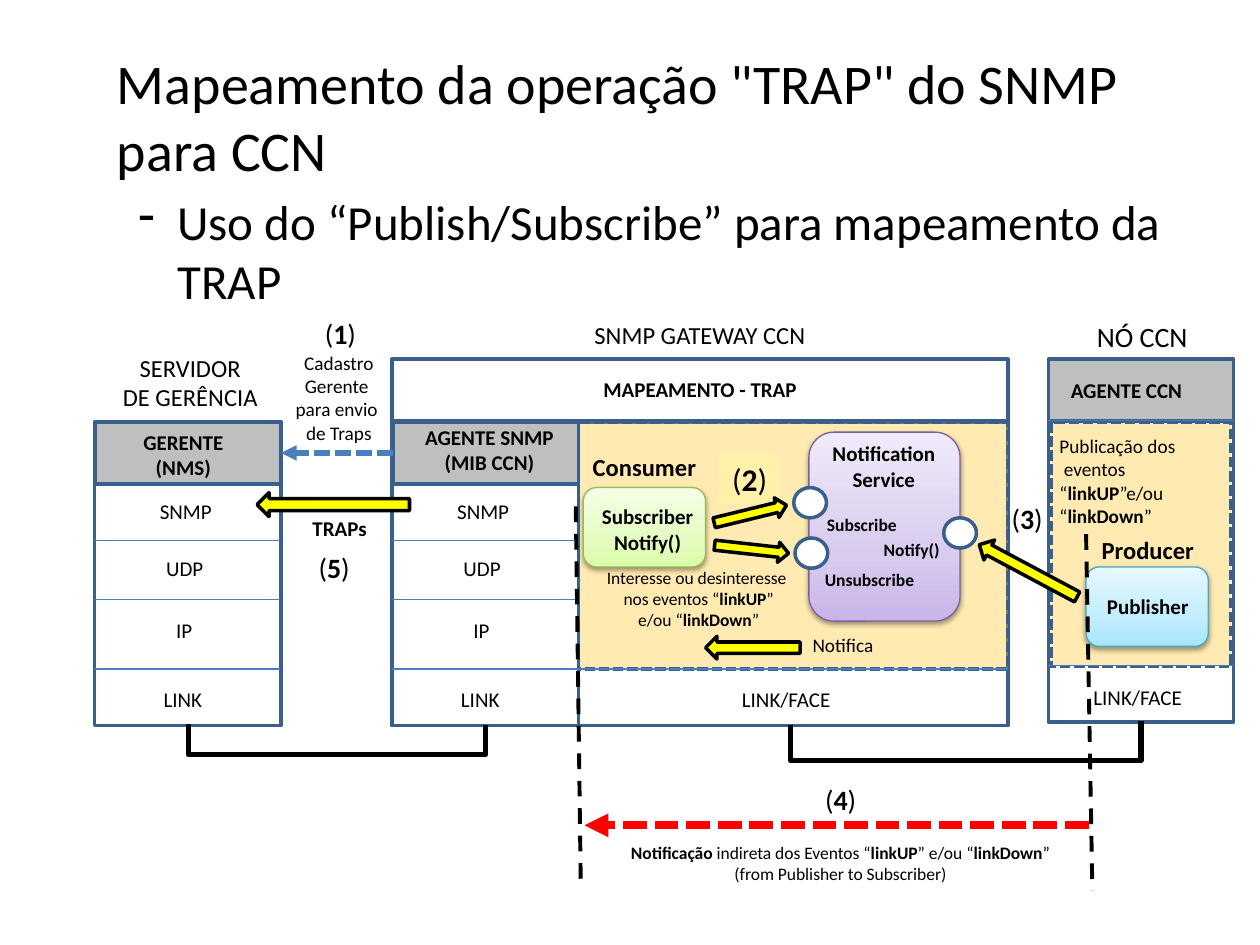
"""Build the slide that maps the SNMP TRAP operation onto CCN."""
from copy import deepcopy
from dataclasses import dataclass

from lxml import etree
from pptx import Presentation
from pptx.dml.color import RGBColor
from pptx.enum.dml import MSO_LINE
from pptx.enum.shapes import MSO_CONNECTOR, MSO_SHAPE
from pptx.enum.text import MSO_ANCHOR, MSO_AUTO_SIZE, PP_ALIGN
from pptx.oxml.ns import qn
from pptx.util import Inches, Pt

RECT, ROUND = MSO_SHAPE.RECTANGLE, MSO_SHAPE.ROUNDED_RECTANGLE
OVAL, ARROW = MSO_SHAPE.OVAL, MSO_SHAPE.RIGHT_ARROW
STRAIGHT, ELBOW = MSO_CONNECTOR.STRAIGHT, MSO_CONNECTOR.ELBOW
SHORT_DASH, LONG_DASH = MSO_LINE.SQUARE_DOT, MSO_LINE.DASH
LEFT, CENTER = PP_ALIGN.LEFT, PP_ALIGN.CENTER
TOP, MIDDLE = MSO_ANCHOR.TOP, MSO_ANCHOR.MIDDLE
FIT = MSO_AUTO_SIZE.SHAPE_TO_FIT_TEXT


@dataclass(frozen=True)
class Theme:
    """Fonts, type sizes and colours of the slide."""
    font: str = "Calibri"
    title: int = 32
    bullet: int = 28
    step: int = 16
    heading: int = 14
    body: int = 12
    note: int = 11
    small: int = 10
    ink: str = "000000"
    paper: str = "FFFFFF"
    gray: str = "BFBFBF"
    border: str = "3A5F8C"
    rule: str = "4B7EBC"
    arrow: str = "FFFF00"
    alert: str = "FF0000"
    amber: tuple = ("FFC000", 30)
    pale: tuple = ("FFFF99", 30)
    green: tuple = ("DAFDA7", "E4FCC2", "F5FFE7")
    blue: tuple = ("A7E6FF", "C1EDFF", "E7F8FF")
    purple: tuple = ("C9B5E8", "D8CBEE", "F0EAF9")


THEME = Theme()

TITLE = 'Mapeamento da operação "TRAP" do SNMP para CCN'
BULLET = "Uso do “Publish/Subscribe” para mapeamento da TRAP"

FRAMES = [
    ((8.32, 3.32, 1.47, 2.41), THEME.paper, None),
    ((8.34, 3.35, 1.43, 1.94), THEME.amber, SHORT_DASH),
    ((4.55, 3.35, 3.45, 2.41), THEME.paper, None),
    ((4.58, 3.35, 3.42, 1.96), THEME.amber, SHORT_DASH),
    ((3.11, 2.85, 4.89, 0.49), THEME.paper, None),
    ((8.32, 2.85, 1.47, 0.49), THEME.gray, None),
]
STACK_LEFTS = [0.75, 3.11]
STACK_RULES = [3.84, 4.29, 4.76, 5.31]
LAYERS = [("SNMP", 0.42, 3.91, 0.69), ("UDP", 0.47, 4.36, 0.56),
          ("IP", 0.55, 4.85, 0.36), ("LINK", 0.45, 5.4, 0.58)]
FACE_RULES = [(4.55, 8, 5.31), (8.32, 9.79, 3.34), (8.32, 9.79, 5.28)]
CARDS = [
    ((4.63, 3.87, 0.97, 0.63), THEME.green, "98B955"),
    ((8.62, 4.5, 0.97, 0.63), THEME.blue, "46AAC5"),
    ((6.42, 3.43, 1.2, 1.5), THEME.purple, "7D60A0"),
]
PORTS = [(6.3, 3.87), (6.31, 4.27), (7.49, 4.11)]
ARROWS = [
    ((7.72, 4.44, 0.88, 0.18), 208.1), ((5.67, 4.28, 0.59, 0.16), 6.3),
    ((2.04, 3.91, 1.21, 0.19), 180), ((5.6, 5.05, 0.75, 0.18), 180),
    ((5.66, 4, 0.59, 0.16), 346.3),
]
STEPS = [("(*1*)", 2.48, 2.46), ("(*4*)", 6.45, 6.16), ("(*5*)", 2.43, 4.32)]
LINKS = [
    ((8.64, 6.55), (4.64, 6.55), THEME.alert, 4.5, SHORT_DASH, True),
    ((4.57, 4.02), (4.61, 7.06), THEME.ink, 2.25, LONG_DASH, False),
    ((8.62, 4.24), (8.67, 7.07), THEME.ink, 2.25, LONG_DASH, False),
]
ELBOWS = [((2.67, 4.57, 0.01, 2.36), 270, ("flipH",), 25),
          ((7.65, 4.35, 0.03, 2.78), 90, ("flipH", "flipV"), -9.48)]
LABELS = [
    ((1.03, 3.36, 0.85, 0.5), ["*GERENTE*", "*(NMS)*"], THEME.body, CENTER),
    ((3.27, 3.32, 1.23, 0.5), ["*AGENTE SNMP*", "*(MIB CCN)*"], THEME.body, CENTER),
    ((2.32, 4.04, 0.75, 0.3), ["*TRAPs*"], THEME.body, CENTER),
    ((5.79, 5.4, 1.06, 0.3), ["LINK/FACE"], THEME.body, LEFT),
    ((8.58, 5.38, 1.06, 0.3), ["LINK/FACE"], THEME.body, LEFT),
    ((4.69, 2.94, 2.02, 0.3), ["*MAPEAMENTO - TRAP*"], THEME.body, LEFT),
    ((8.4, 2.95, 1.31, 0.3), ["*AGENTE CCN*"], THEME.body, LEFT),
    ((0.73, 2.75, 1.56, 0.57), ["SERVIDOR", "DE GERÊNCIA"], THEME.heading, CENTER),
    ((8.52, 2.49, 1.09, 0.37), ["NÓ CCN"], THEME.step, CENTER),
    ((4.61, 2.49, 1.89, 0.34), ["SNMP GATEWAY CCN"], THEME.heading, CENTER),
    ((4.67, 3.95, 0.94, 0.5), ["*Subscriber*", "*Notify()*"], THEME.body, CENTER),
    ((4.6, 3.54, 1.03, 0.34), ["*Consumer*"], THEME.heading, CENTER),
    ((2.21, 2.74, 0.96, 0.84),
     ["Cadastro", "Gerente ", "para envio ", "de Traps"], THEME.note, CENTER),
    ((8.31, 3.4, 1.25, 0.84),
     ["Publicação dos", " eventos", "“*linkUP*”e/ou", "“*linkDown*”"], THEME.note, LEFT),
    ((4.61, 4.45, 1.87, 0.61),
     ["Interesse ou desinteresse ", "nos eventos “*linkUP*”", "e/ou “*linkDown*”"],
     THEME.small, CENTER),
    ((4.88, 6.63, 3.58, 0.44),
     ["*Notificação *indireta dos Eventos “*linkUP*” e/ou “*linkDown*”",
      "(from Publisher to Subscriber)"], THEME.small, CENTER),
    ((8.68, 4.66, 0.86, 0.3), ["*Publisher*"], THEME.body, CENTER),
    ((6.5, 3.45, 1.03, 0.5), ["*Notification*", "*Service*"], THEME.body, CENTER),
    ((6.46, 4.03, 0.76, 0.27), ["*Subscribe*"], THEME.small, CENTER),
    ((6.44, 4.47, 0.92, 0.27), ["*Unsubscribe*"], THEME.small, CENTER),
    ((6.91, 4.23, 0.65, 0.27), ["*Notify()*"], THEME.small, CENTER),
    ((8.64, 4.2, 0.94, 0.34), ["*Producer*"], THEME.heading, CENTER),
    ((6.33, 4.98, 0.72, 0.29), ["Notifica"], THEME.note, CENTER),
]


def child(parent, tag, **attributes):
    return etree.SubElement(parent, qn(tag), {k: str(v) for k, v in attributes.items()})


def write(box, lines, size, align=LEFT, wrap=True, anchor=TOP, fit=True):
    frame = box.text_frame
    frame.word_wrap, frame.vertical_anchor = wrap, anchor
    if fit:
        frame.auto_size = FIT
    for index, line in enumerate(lines):
        para = frame.add_paragraph() if index else frame.paragraphs[0]
        para.alignment = align
        for part, words in enumerate(line.split("*")):
            if words:
                span = para.add_run()
                span.text = words
                span.font.name, span.font.size = THEME.font, Pt(size)
                span.font.bold = part % 2 == 1
                span.font.color.rgb = RGBColor.from_string(THEME.ink)
    return box


def add_label(page, at, lines, size, align=LEFT, **options):
    return write(page.shapes.add_textbox(*map(Inches, at)), lines, size, align, **options)


def add_block(page, kind, at, fill, line=THEME.border, width=2, dash=None):
    block = page.shapes.add_shape(kind, *map(Inches, at))
    block.shadow.inherit = False
    color, alpha = fill if isinstance(fill, tuple) else (fill, None)
    block.fill.solid()
    block.fill.fore_color.rgb = RGBColor.from_string(color)
    if alpha:
        child(block.element.spPr.find(".//" + qn("a:srgbClr")), "a:alpha", val=alpha * 1000)
    if line:
        block.line.color.rgb = RGBColor.from_string(line)
        block.line.width, block.line.dash_style = Pt(width), dash
    else:
        block.line.fill.background()
    return block


def add_card(page, at, colors, line):
    card = add_block(page, ROUND, at, colors[0], line, 0.75)
    card.fill.gradient()
    card.fill.gradient_angle = 90
    stops = card.element.spPr.find(".//" + qn("a:gsLst"))
    stops.insert(1, deepcopy(stops[0]))
    for stop, color, position in zip(card.fill.gradient_stops, colors, (0, 0.35, 1)):
        stop.color.rgb, stop.position = RGBColor.from_string(color), position
    shadow = child(card.element.spPr.find(qn("a:effectLst")), "a:outerShdw", blurRad=Pt(3.1),
                   dist=Pt(1.6), dir=5400000, rotWithShape=0)
    child(child(shadow, "a:srgbClr", val=THEME.ink), "a:alpha", val=38000)


def add_link(page, start, end, color, width, dash=None, arrow=False, kind=STRAIGHT):
    link = page.shapes.add_connector(kind, *map(Inches, (*start, *end)))
    link.line.color.rgb = RGBColor.from_string(color)
    link.line.width, link.line.dash_style = Pt(width), dash
    if arrow:
        child(link.line._get_or_add_ln(), "a:tailEnd", type="triangle")
    child(link.element.spPr, "a:effectLst")
    return link


def add_elbow(page, at, turn, flips, bend):
    left, top, width, height = at
    elbow = add_link(page, (left, top), (left + width, top + height), THEME.ink, 3, kind=ELBOW)
    frame = elbow.element.spPr.find(qn("a:xfrm"))
    frame.set("rot", str(turn * 60000))
    for flip in flips:
        frame.set(flip, "1")
    guides = elbow.element.spPr.find(".//" + qn("a:avLst"))
    child(guides, "a:gd", name="adj1", fmla=f"val {round(bend * 100000)}")


def add_stack(page, left):
    add_block(page, RECT, (left, 3.35, 1.48, 2.41), THEME.paper)
    for top in STACK_RULES:
        add_link(page, (left, top), (left + 1.47, top), THEME.rule, 0.75)
    for name, offset, top, width in LAYERS:
        add_label(page, (left + offset, top, width, 0.3), [name], THEME.body, wrap=False)
    return add_block(page, RECT, (left + 0.01, 3.35, 1.47, 0.49), THEME.gray)


def add_step(page, text, left, top):
    box = add_block(page, RECT, (left, top, 0.48, 0.37), THEME.paper, None)
    write(box, [text], THEME.step, wrap=False)


def main():
    deck = Presentation()
    deck.slide_width, deck.slide_height = Inches(10), Inches(7.5)
    page = deck.slides.add_slide(deck.slide_layouts[6])
    add_label(page, (0.83, 0.29, 8.83, 1.25), [TITLE], THEME.title, anchor=MIDDLE, fit=False)
    body = page.shapes.add_textbox(*map(Inches, (1, 1.47, 8.83, 5.39)))
    layout = body.text_frame.paragraphs[0]._p.get_or_add_pPr()
    layout.set("marL", str(Inches(0.31)))
    layout.set("indent", str(-Inches(0.31)))
    child(layout, "a:buChar", char="-")
    write(body, [BULLET], THEME.bullet, fit=False)

    add_step(page, "(*3*)", 7.93, 3.93)
    for at, fill, dash in FRAMES:
        add_block(page, RECT, at, fill, dash=dash)
    manager, agent = [add_stack(page, left) for left in STACK_LEFTS]
    for left, right, top in FACE_RULES:
        add_link(page, (left, top), (right, top), THEME.rule, 0.75)
    for elbow in ELBOWS:
        add_elbow(page, *elbow)
    for step in STEPS:
        add_step(page, *step)
    second = add_block(page, RECT, (5.71, 3.6, 0.48, 0.4), THEME.pale, None)
    write(second, ["(*2*)"], 18, CENTER, anchor=MIDDLE, fit=False)
    for card in CARDS:
        add_card(page, *card)
    for left, top in PORTS:
        add_block(page, OVAL, (left, top, 0.26, 0.24), THEME.paper)
    for link in LINKS:
        add_link(page, *link)
    request = add_link(page, (3.12, 3.59), (2.23, 3.59), THEME.rule, 3, SHORT_DASH, True)
    request.begin_connect(agent, 1)
    request.end_connect(manager, 3)
    for at, turn in ARROWS:
        add_block(page, ARROW, at, THEME.arrow, THEME.ink).rotation = turn
    for label in LABELS:
        add_label(page, *label)
    deck.save("out.pptx")


if __name__ == "__main__":
    main()
